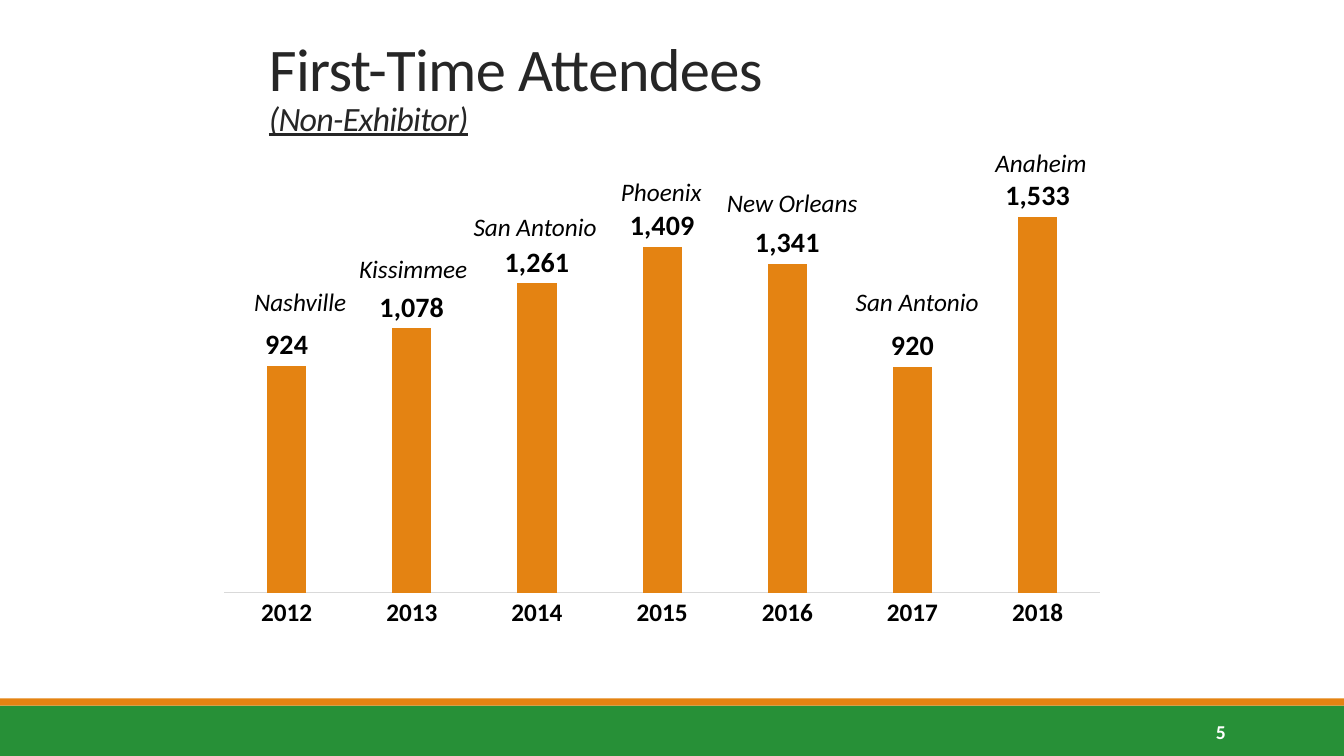
import pptx
import pptx.chart.data
import pptx.dml.color
import pptx.enum.chart
import pptx.enum.shapes
import pptx.enum.text
import pptx.oxml
import pptx.oxml.ns
import pptx.util

Cm = pptx.util.Cm
Pt = pptx.util.Pt
RGBColor = pptx.dml.color.RGBColor
ALIGN = pptx.enum.text.PP_ALIGN
ANCHOR = pptx.enum.text.MSO_ANCHOR

GREEN = RGBColor(0x27, 0x90, 0x37)
ORANGE = RGBColor(0xE4, 0x83, 0x12)
CHARCOAL = RGBColor(0x26, 0x26, 0x26)
GREY = RGBColor(0xD9, 0xD9, 0xD9)
BLACK = RGBColor(0, 0, 0)
WHITE = RGBColor(255, 255, 255)
FONT = "Calibri"

SLIDE_WIDTH, SLIDE_HEIGHT = Cm(33.87), Cm(19.05)

ATTENDEES = {"2012": 924, "2013": 1078, "2014": 1261, "2015": 1409,
             "2016": 1341, "2017": 920, "2018": 1533}

# City, left and top in centimetres
CITIES = [
    ("Nashville", 5.51, 7.09),
    ("Kissimmee", 8.36, 6.27),
    ("San Antonio", 11.43, 5.21),
    ("Phoenix", 14.61, 4.32),
    ("New Orleans", 17.91, 4.6),
    ("San Antonio", 21.06, 7.09),
    ("Anaheim", 24.18, 3.58),
]


def style_font(font, size, color, bold=False, italic=False):
    font.name = FONT
    font.size = Pt(size)
    font.color.rgb = color
    font.bold = bold
    font.italic = italic


def add_band(page, top, height, color):
    band = page.shapes.add_shape(pptx.enum.shapes.MSO_SHAPE.RECTANGLE,
                                 0, top, SLIDE_WIDTH, height)
    band.shadow.inherit = False
    band.fill.solid()
    band.fill.fore_color.rgb = color
    band.line.fill.background()


def add_text(page, text, left, top, width, height, align, anchor=ANCHOR.TOP):
    """Add a wrapping text box and return its only paragraph."""
    box = page.shapes.add_textbox(left, top, width, height)
    frame = box.text_frame
    frame.word_wrap = True
    frame.vertical_anchor = anchor
    frame.text = text
    para = frame.paragraphs[0]
    para.alignment = align
    return para


def add_title(page):
    para = add_text(page, "First-Time Attendees\v(Non-Exhibitor)", Cm(6.53), Cm(1.02),
                    Cm(20.96), Cm(2.59), ALIGN.LEFT, ANCHOR.BOTTOM)
    para.line_spacing = 0.85
    heading, subtitle = para.runs
    style_font(heading.font, 43.2, CHARCOAL)
    style_font(subtitle.font, 24.3, CHARCOAL, italic=True)
    subtitle.font.underline = True
    for span in para.runs:
        span.font._element.set("spc", "-50")


def set_plot_area(chart, left, top, width, height):
    """Fix the inner plot area, in fractions of the chart."""
    plot_area = chart._chartSpace.chart.plotArea
    for old in plot_area.findall(pptx.oxml.ns.qn("c:layout")):
        plot_area.remove(old)
    plot_area.insert(0, pptx.oxml.parse_xml(
        f'<c:layout {pptx.oxml.ns.nsdecls("c")}><c:manualLayout>'
        '<c:layoutTarget val="inner"/><c:xMode val="edge"/><c:yMode val="edge"/>'
        f'<c:x val="{left}"/><c:y val="{top}"/><c:w val="{width}"/><c:h val="{height}"/>'
        '</c:manualLayout></c:layout>'))


def add_attendee_chart(page):
    data = pptx.chart.data.CategoryChartData(number_format="#,##0")
    data.categories = list(ATTENDEES)
    data.add_series("Series 1", list(ATTENDEES.values()))
    chart = page.shapes.add_chart(pptx.enum.chart.XL_CHART_TYPE.COLUMN_CLUSTERED,
                                  Cm(5.51), Cm(3.81), Cm(22.86), Cm(12.93), data).chart
    chart.has_legend = False
    chart.has_title = False
    style_font(chart.font, 10, BLACK)
    set_plot_area(chart, 0.006, 0, 0.966, 0.861)

    years = chart.category_axis
    years.major_tick_mark = pptx.enum.chart.XL_TICK_MARK.NONE
    years.format.line.color.rgb = GREY
    years.format.line.width = Pt(0.75)
    style_font(years.tick_labels.font, 18, BLACK, bold=True)

    counts = chart.value_axis
    counts.minimum_scale, counts.maximum_scale = 0, 1800
    counts.has_major_gridlines = False
    counts.visible = False

    plot = chart.plots[0]
    plot.gap_width = 219
    plot.overlap = -27
    plot.vary_by_categories = False
    series = plot.series[0]
    series.format.fill.solid()
    series.format.fill.fore_color.rgb = ORANGE
    labels = series.data_labels
    labels.show_value = True
    labels.number_format = "#,##0"
    labels.number_format_is_linked = False
    labels.position = pptx.enum.chart.XL_LABEL_POSITION.OUTSIDE_END
    style_font(labels.font, 20, BLACK, bold=True)


def add_city(page, name, left, top):
    para = add_text(page, name, Cm(left), Cm(top), Cm(4.11), Cm(1.02), ALIGN.CENTER)
    style_font(para.runs[0].font, 18, BLACK, italic=True)


def add_page_number(page):
    para = add_text(page, "5", Cm(27.51), Cm(17.93), Cm(3.63), Cm(1.02),
                    ALIGN.RIGHT, ANCHOR.MIDDLE)
    style_font(para.runs[0].font, 14, WHITE, bold=True)


def main():
    deck = pptx.Presentation()
    deck.slide_width, deck.slide_height = SLIDE_WIDTH, SLIDE_HEIGHT
    page = deck.slides.add_slide(deck.slide_layouts[6])
    add_band(page, Cm(17.78), Cm(1.27), GREEN)
    add_band(page, Cm(17.6), Cm(0.18), ORANGE)
    add_title(page)
    add_attendee_chart(page)
    for name, left, top in CITIES:
        add_city(page, name, left, top)
    add_page_number(page)
    deck.save("out.pptx")


if __name__ == "__main__":
    main()
